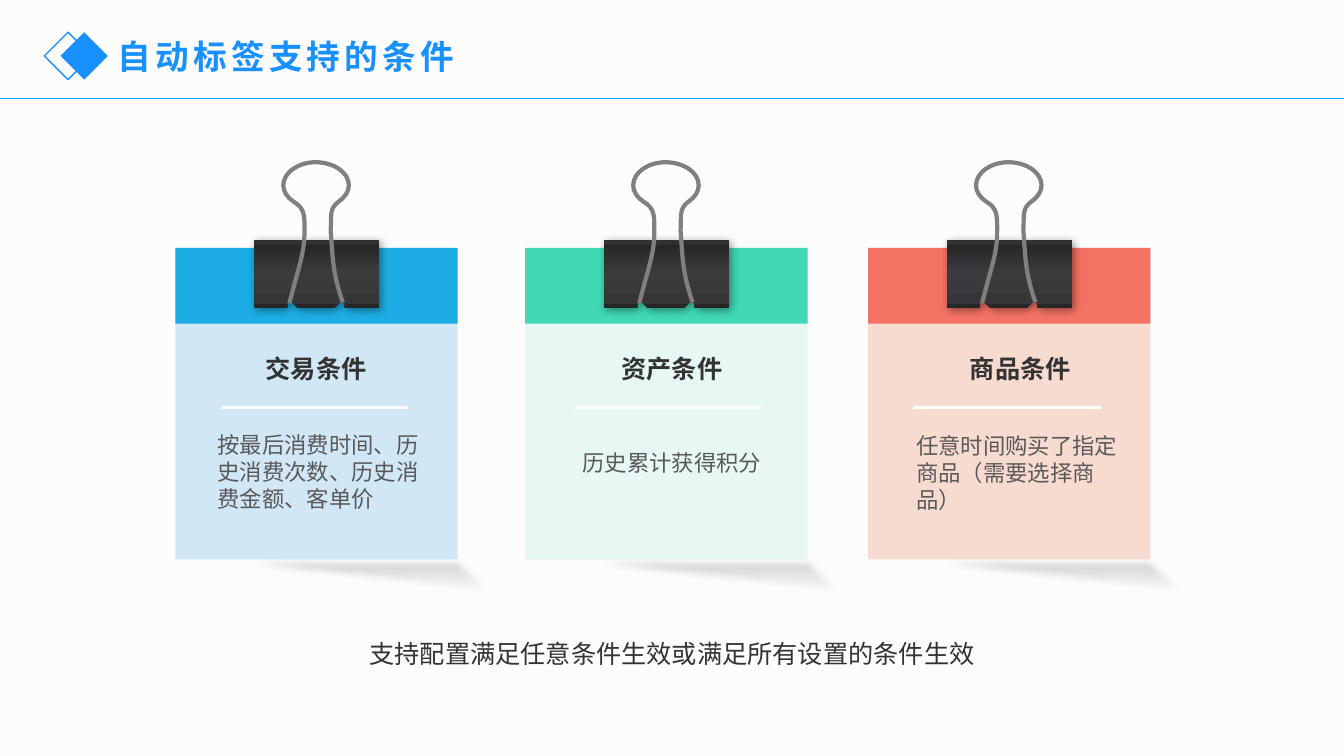
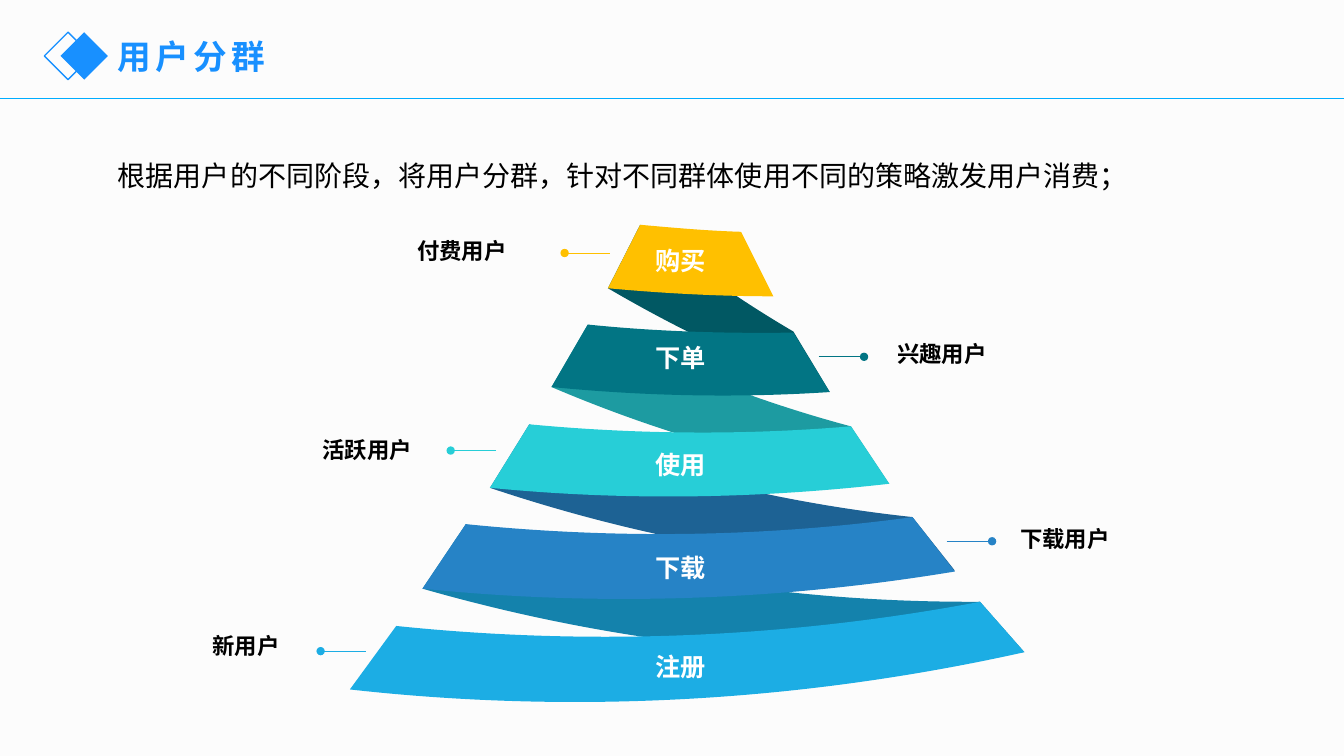
from pptx import Presentation
from pptx.dml.color import RGBColor
from pptx.enum.shapes import MSO_CONNECTOR as Link, MSO_SHAPE as Form
from pptx.enum.text import MSO_ANCHOR as Anchor, MSO_AUTO_SIZE as Fit, PP_ALIGN as Align
from pptx.oxml import parse_xml
from pptx.oxml.ns import nsdecls, qn
from pptx.util import Inches, Pt
from lxml.etree import SubElement

FONT = "Noto Sans CJK SC"
PAPER = RGBColor(0xFC, 0xFC, 0xFC)
WHITE = RGBColor(0xFF, 0xFF, 0xFF)
BLACK = RGBColor(0, 0, 0)
INK = RGBColor(0x33, 0x33, 0x33)
GREY = RGBColor(0x59, 0x59, 0x59)
WIRE = RGBColor(0x80, 0x80, 0x80)
BRAND = RGBColor(0x18, 0x90, 0xFF)
RULE = RGBColor(0x00, 0xAD, 0xFF)
SKY = RGBColor(0x1C, 0xAD, 0xE4)
PALE = RGBColor(0xD1, 0xE7, 0xF6)
MINT = RGBColor(0x40, 0xD8, 0xB5)
CORAL = RGBColor(0xF3, 0x72, 0x64)
PEACH = RGBColor(0xF3, 0xA0, 0x7F)
GOLD = RGBColor(0xFF, 0xC0, 0x00)
TEAL = RGBColor(0x02, 0x75, 0x84)
AQUA = RGBColor(0x27, 0xCE, 0xD7)
BLUE = RGBColor(0x26, 0x83, 0xC6)
PINE = RGBColor(0x01, 0x58, 0x63)
LAKE = RGBColor(0x1D, 0x9B, 0xA1)
NAVY = RGBColor(0x1D, 0x62, 0x94)
OCEAN = RGBColor(0x14, 0x82, 0xAC)

CAST = [(0, "F3F3F3", 12), (100, "808080", 44)]
STEEL = [(7, "313132", 100), (7, "262626", 100), (46, "3B3B3D", 100),
         (93, "363638", 100), (93, "262626", 100)]

CLAMP = [(0, 0), (1.24, 0), (1.24, .68), (.9, .68), (.9, .62), (.85, .62),
         (.79, .68), (.44, .68), (.38, .62), (.33, .62), (.33, .68), (0, .68)]
LOOP = [(.35, .63), (.45, .24), (.5, .13), (.5, -.08),
        (.5, -.23), (.51, -.31), (.39, -.38),
        (.33, -.42), (.29, -.48), (.29, -.54),
        (.29, -.67), (.44, -.77), (.61, -.77),
        (.79, -.77), (.94, -.67), (.94, -.54),
        (.94, -.48), (.9, -.42), (.84, -.38),
        (.74, -.31), (.77, -.23), (.76, -.09),
        (.78, .13), (.77, .31), (.88, .62)]

CARDS = [
    (1.74, SKY, PALE, 100, "交易条件", (.72, 1.35), .45,
     "按最后消费时间、历史消费次数、历史消费金额、客单价", (.32, 1.77, 2.4)),
    (5.21, MINT, MINT, 11, "资产条件", (.67, 1.57), .48,
     "历史累计获得积分", (.47, 1.95, 2.34)),
    (8.61, CORAL, PEACH, 35, "商品条件", (.83, 1.36), .45,
     "任意时间购买了指定商品（需要选择商品）", (.38, 1.78, 2.27)),
]

BANDS = [
    (OCEAN, [(1.15, 2.97), (2.8, 3.5), (4.52, 3.75), (6.25, 3.74)],
     [(6.69, 4.24), (4.68, 4.38), (2.67, 4.17), (.72, 3.61)]),
    (NAVY, [(1.78, 1.98), (3.01, 2.45), (4.28, 2.76), (5.58, 2.9)],
     [(6, 3.43), (4.43, 3.39), (2.88, 3.11), (1.39, 2.61)]),
    (LAKE, [(2.36, .99), (3.19, 1.42), (4.07, 1.76), (4.97, 2)],
     [(5.35, 2.57), (4.2, 2.39), (3.08, 2.07), (2, 1.61)]),
    (PINE, [(2.88, 0), (3.37, .4), (3.87, .75), (4.4, 1.06)],
     [(4.76, 1.66), (3.99, 1.39), (3.26, 1.04), (2.56, .63)]),
    (BLUE, [(1.15, 2.97), (2.63, 3.12), (4.11, 3.1), (5.58, 2.9)],
     [(6, 3.44), (4.25, 3.73), (2.48, 3.79), (.72, 3.61)]),
    (AQUA, [(1.78, 1.98), (2.84, 2.08), (3.91, 2.09), (4.97, 2)],
     [(5.35, 2.57), (4.03, 2.72), (2.71, 2.74), (1.39, 2.61)]),
    (GOLD, [(2.88, 0), (3.21, .03), (3.55, .06), (3.88, .07)],
     [(4.2, .71), (3.65, .71), (3.1, .68), (2.56, .63)]),
    (TEAL, [(2.36, .99), (3.04, 1.06), (3.72, 1.08), (4.4, 1.07)],
     [(4.76, 1.66), (3.84, 1.72), (2.92, 1.7), (2, 1.61)]),
    (SKY, [(.46, 3.98), (2.39, 4.18), (4.34, 4.1), (6.25, 3.74)],
     [(6.69, 4.24), (4.49, 4.73), (2.24, 4.86), (0, 4.61)]),
]

STAGES = [
    ("购买", .15, "付费用户", (.57, .07, 1.1), (2.58, .28, -.45), GOLD),
    ("下单", 1.12, "兴趣用户", (5.33, 1.1, 1.1), (4.65, 1.31, .45), TEAL),
    ("使用", 2.18, "活跃用户", (-.37, 2.05, 1.1), (1.45, 2.24, -.45), AQUA),
    ("下载", 3.2, "下载用户", (6.55, 2.93, 1.1), (5.92, 3.14, .45), BLUE),
    ("注册", 4.18, "新用户", (-1.46, 3.99, .88), (.16, 4.23, -.45), SKY),
]


def paint(shape, fill=None, line=None, width=1, alpha=100):
    shape.shadow.inherit = False
    if fill is None:
        shape.fill.background()
    else:
        shape.fill.solid()
        shape.fill.fore_color.rgb = fill
        if alpha < 100:
            tint = shape.element.spPr.find(qn("a:solidFill"))[0]
            SubElement(tint, qn("a:alpha")).set("val", str(alpha * 1000))
    if line is None:
        shape.line.fill.background()
    else:
        shape.line.color.rgb = line
        shape.line.width = Pt(width)
    return shape


def grade(shape, stops, angle):
    paint(shape)
    marks = "".join(
        f'<a:gs pos="{at * 1000}"><a:srgbClr val="{tint}">'
        f'<a:alpha val="{alpha * 1000}"/></a:srgbClr></a:gs>'
        for at, tint, alpha in stops)
    props = shape.element.spPr
    props.replace(props.find(qn("a:noFill")), parse_xml(
        f'<a:gradFill {nsdecls("a")} rotWithShape="1"><a:gsLst>{marks}</a:gsLst>'
        f'<a:lin ang="{angle * 60000}" scaled="0"/></a:gradFill>'))
    return props.find(qn("a:effectLst"))


def drop(effects):
    effects.append(parse_xml(
        f'<a:outerShdw {nsdecls("a")} blurRad="{Pt(6)}" dist="{Pt(2)}" dir="2700000" '
        'algn="tl" rotWithShape="0"><a:srgbClr val="000000">'
        '<a:alpha val="40000"/></a:srgbClr></a:outerShdw>'))


def block(shapes, form, x, y, w, h):
    return shapes.add_shape(form, Inches(x), Inches(y), Inches(w), Inches(h))


def trace(shapes, x, y, points, close=True):
    spots = [(Inches(x + a), Inches(y + b)) for a, b in points]
    pen = shapes.build_freeform(*spots[0])
    pen.add_line_segments(spots[1:], close=close)
    return pen.convert_to_shape()


def bend(shape, starts):
    legs = list(shape.element.iter(qn("a:lnTo")))
    for start in starts:
        arc = parse_xml(f'<a:cubicBezTo {nsdecls("a")}/>')
        legs[start].addprevious(arc)
        for leg in legs[start:start + 3]:
            arc.append(leg[0])
            leg.getparent().remove(leg)
    return shape


def stroke(shapes, x, y, length, color, width, dot=False):
    line = shapes.add_connector(Link.STRAIGHT, Inches(x), Inches(y),
                                Inches(x + length), Inches(y))
    line.line.color.rgb = color
    line.line.width = Pt(width)
    props = line.element.spPr
    if dot:
        SubElement(props.find(qn("a:ln")), qn("a:tailEnd")).set("type", "oval")
    SubElement(props, qn("a:effectLst"))
    return line


def style(shape, text, size, color, bold=False, align=Align.LEFT, gap=0):
    frame = shape.text_frame
    frame.text = text
    frame.vertical_anchor = Anchor.TOP
    para = frame.paragraphs[0]
    para.alignment = align
    para.font.size = Pt(size)
    para.font.bold = bold
    para.font.color.rgb = color
    para.font.name = FONT
    for mark in shape.element.iter(qn("a:defRPr")):
        SubElement(mark, qn("a:ea")).set("typeface", FONT)
        if gap:
            mark.set("spc", str(gap * 100))
    return para


def write(shapes, x, y, w, h, text, size, color, bold=False, align=Align.LEFT, wrap=True):
    box = shapes.add_textbox(Inches(x), Inches(y), Inches(w), Inches(h))
    box.text_frame.word_wrap = wrap
    return style(box, text, size, color, bold, align)


def brand(deck, layout, slide):
    deck.slide_master.background.fill.solid()
    deck.slide_master.background.fill.fore_color.rgb = PAPER
    shapes = slide.shapes
    parts = [stroke(shapes, -.09, .98, 13.5, RULE, 1),
             paint(block(shapes, Form.DIAMOND, .44, .32, .47, .47), line=BRAND),
             paint(block(shapes, Form.DIAMOND, .6, .32, .47, .47), BRAND)]
    for part in parts:
        layout.shapes.element.append(part.element)


def head(slide, text):
    title = slide.shapes.title
    title.left, title.top = Inches(1.07), Inches(.31)
    title.width, title.height = Inches(5.49), Inches(.5)
    title.text_frame.auto_size = Fit.NONE
    style(title, text, 24, BRAND, True, gap=3)


def clip(shapes, x, y):
    drop(grade(trace(shapes, x, y, CLAMP), STEEL, 90))
    loop = bend(trace(shapes, x, y, LOOP, False), range(0, len(LOOP) - 1, 3))
    paint(loop, line=WIRE, width=3)


def card(slide, x, y, band, sheet, alpha, name, spot, rule, text, area):
    parts = slide.shapes.add_group_shape().shapes
    cast = trace(parts, x, y, [(2.86, 3.07), (3.31, 3.49), (-.41, 3.07)])
    SubElement(grade(cast, CAST, 270), qn("a:softEdge")).set("rad", str(Pt(5)))
    paint(block(parts, Form.RECTANGLE, x, y, 2.8, 3.09), sheet, alpha=alpha)
    paint(block(parts, Form.RECTANGLE, x, y, 2.8, .75), band)
    clip(parts, x + .78, y - .08)
    shapes = slide.shapes
    write(shapes, x + spot[0], y + 1, spot[1], .45, name, 18, INK, True, Align.CENTER)
    stroke(shapes, x + rule, y + 1.58, 1.86, PAPER, 2.25)
    write(shapes, x + area[0], y + area[1], area[2], 1.3, text, 16, GREY)


def spiral(slide, x, y):
    parts = slide.shapes.add_group_shape().shapes
    for color, top, base in BANDS:
        paint(bend(trace(parts, x, y, top + base), (0, 4)), color)
    shapes = slide.shapes
    for name, down, label, (a, b, w), (start, level, length), color in STAGES:
        stroke(parts, x + start, y + level, length, color, .5, True)
        write(shapes, x + 2.93, y + down, .71, .4, name, 18, WHITE, True, wrap=False)
        write(shapes, x + a, y + b, w, .37, label, 16, BLACK, True, wrap=False)


def rules(slide):
    head(slide, "自动标签支持的条件")
    for x, *rest in CARDS:
        card(slide, x, 2.46, *rest)
    write(slide.shapes, 3.13, 6.28, 7.07, .57,
          "支持配置满足任意条件生效或满足所有设置的条件生效", 18, INK, align=Align.CENTER)


def groups(slide):
    head(slide, "用户分群")
    para = write(slide.shapes, 1.07, 1.36, 10.41, .53,
                 "根据用户的不同阶段，将用户分群，针对不同群体使用不同的策略激发用户消费；",
                 20, BLACK)
    para.line_spacing = 1.5
    spiral(slide, 3.47, 2.23)


def main():
    deck = Presentation()
    deck.slide_width, deck.slide_height = Inches(13.33), Inches(7.5)
    layout = deck.slide_layouts[5]
    first = deck.slides.add_slide(layout)
    brand(deck, layout, first)
    rules(first)
    groups(deck.slides.add_slide(layout))
    deck.save("out.pptx")


if __name__ == "__main__":
    main()
